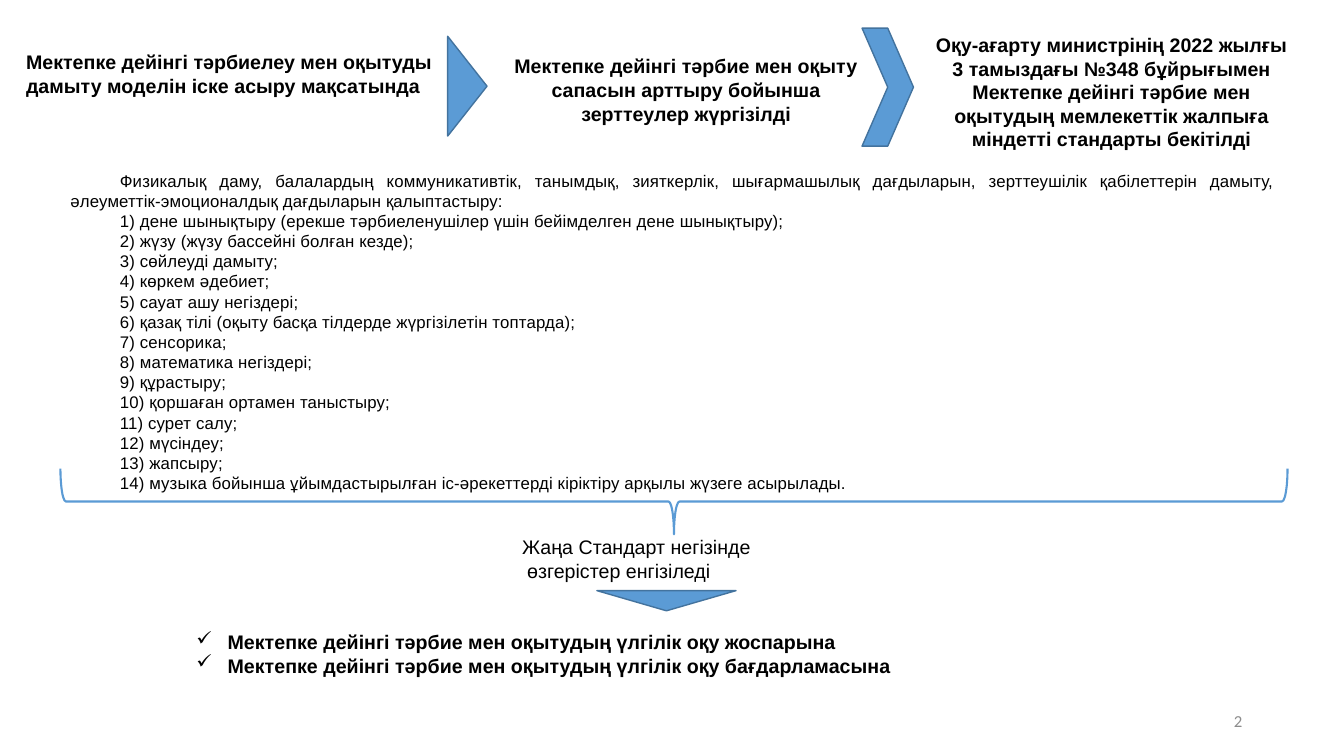
from pptx import Presentation
from pptx.dml.color import RGBColor
from pptx.enum.shapes import MSO_SHAPE
from pptx.enum.text import MSO_ANCHOR, PP_ALIGN
from pptx.util import Inches, Pt
from lxml import etree

LEFT, MID, RIGHT, JUST = PP_ALIGN.LEFT, PP_ALIGN.CENTER, PP_ALIGN.RIGHT, PP_ALIGN.JUSTIFY
MERGE, BRACE, CHEVRON = MSO_SHAPE.FLOWCHART_MERGE, MSO_SHAPE.LEFT_BRACE, MSO_SHAPE.CHEVRON
TOP, MIDDLE = MSO_ANCHOR.TOP, MSO_ANCHOR.MIDDLE
COLORS = {"text": "000000", "page": "FFFFFF", "blue": "5B9BD5", "edge": "43739E", "gray": "8C8C8C"}

INTRO = ("Физикалық даму, балалардың коммуникативтік, танымдық, зияткерлік, шығармашылық дағдыларын, "
         "зерттеушілік қабілеттерін дамыту, әлеуметтік-эмоционалдық дағдыларын қалыптастыру:")
SKILLS = [
    "дене шынықтыру (ерекше тәрбиеленушілер үшін бейімделген дене шынықтыру);",
    "жүзу (жүзу бассейні болған кезде);",
    "сөйлеуді дамыту;",
    "көркем әдебиет;",
    "сауат ашу негіздері;",
    "қазақ тілі (оқыту басқа тілдерде жүргізілетін топтарда);",
    "сенсорика;",
    "математика негіздері;",
    "құрастыру;",
    "қоршаған ортамен таныстыру;",
    "сурет салу;",
    "мүсіндеу;",
    "жапсыру;",
    "музыка бойынша ұйымдастырылған іс-әрекеттерді кіріктіру арқылы жүзеге асырылады.",
]
STEPS = [
    ((0.16, 0.45, 4.92, 0.57), LEFT,
     "Мектепке дейінгі тәрбиелеу мен оқытуды дамыту моделін іске асыру мақсатында"),
    ((4.94, 0.49, 3.73, 0.81), MID,
     "Мектепке дейінгі тәрбие мен оқыту сапасын арттыру бойынша зерттеулер жүргізілді"),
    ((9.15, 0.28, 3.75, 1.28), MID,
     "Оқу-ағарту министрінің 2022 жылғы 3 тамыздағы №348 бұйрығымен Мектепке дейінгі тәрбие мен "
     "оқытудың мемлекеттік жалпыға міндетті стандарты бекітілді"),
]
CHANGE = ["Жаңа Стандарт негізінде", "өзгерістер енгізіледі"]
PLANS = [
    "Мектепке дейінгі тәрбие мен оқытудың үлгілік оқу жоспарына",
    "Мектепке дейінгі тәрбие мен оқытудың үлгілік оқу бағдарламасына",
]
ARROWS = [
    (CHEVRON, (8.55, 0.28, 0.51, 1.17), 0),
    (MERGE, (4.14, 0.66, 0.99, 0.39), 270),
    (MERGE, (5.92, 5.86, 1.38, 0.2), 0),
]


def color(name):
    return RGBColor.from_string(COLORS[name])


def add_text(slide, box, lines, size=14, bold=False, align=LEFT, font="Arial",
             ink="text", anchor=TOP, wrap=True):
    shape = slide.shapes.add_textbox(*map(Inches, box))
    frame = shape.text_frame
    frame.word_wrap = wrap
    frame.vertical_anchor = anchor
    frame.text = "\n".join(lines)
    for para in frame.paragraphs:
        para.alignment = align
        para.font.size, para.font.bold, para.font.name = Pt(size), bold, font
        para.font.color.rgb = color(ink)
    return shape


def indent(para, first, left=0):
    props = para._p.get_or_add_pPr()
    props.set("marL", str(Inches(left)))
    props.set("indent", str(Inches(first)))
    return props


def add_check(para):
    props = indent(para, -0.31, 0.31)
    tag = props.tag.replace("pPr", "buChar")
    mark = etree.Element(tag, char="✓")
    props.insert(0, mark)


def add_mark(slide, kind, box, turn, line, width):
    shape = slide.shapes.add_shape(kind, *map(Inches, box))
    shape.rotation = turn
    shape.shadow.inherit = False
    shape.line.color.rgb = color(line)
    shape.line.width = Pt(width)
    return shape


def main():
    """Build the slide on the new preschool standard."""
    deck = Presentation()
    deck.slide_width, deck.slide_height = Inches(13.33), Inches(7.5)
    slide = deck.slides.add_slide(deck.slide_layouts[6])

    items = [f"{num}) {skill}" for num, skill in enumerate(SKILLS, 1)]
    body = add_text(slide, (0.6, 1.44, 12.15, 4.09), [INTRO, *items], 12, align=JUST)
    body.fill.solid()
    body.fill.fore_color.rgb = color("page")
    body.text_frame.margin_top = Inches(0.25)
    for para in body.text_frame.paragraphs:
        indent(para, 0.49)
        for run in para.runs:
            run.font._element.set("spc", "10")

    for box, align, text in STEPS:
        add_text(slide, box, [text], bold=True, align=align)

    plans = add_text(slide, (1.85, 6.2, 9.67, 0.57), PLANS, bold=True)
    for para in plans.text_frame.paragraphs:
        add_check(para)

    for kind, box, turn in ARROWS:
        arrow = add_mark(slide, kind, box, turn, "edge", 1)
        arrow.fill.solid()
        arrow.fill.fore_color.rgb = color("blue")
    brace = add_mark(slide, BRACE, (6.36, -1.11, 0.65, 12.17), 270, "blue", 1.5)
    brace.fill.background()

    change = add_text(slide, (5.08, 5.26, 2.48, 0.57), CHANGE, wrap=False)
    indent(change.text_frame.paragraphs[1], 0.05)
    add_text(slide, (9.42, 6.95, 3, 0.4), ["2"], 12, align=RIGHT, font="Calibri",
             ink="gray", anchor=MIDDLE)
    deck.save("out.pptx")


if __name__ == "__main__":
    main()
